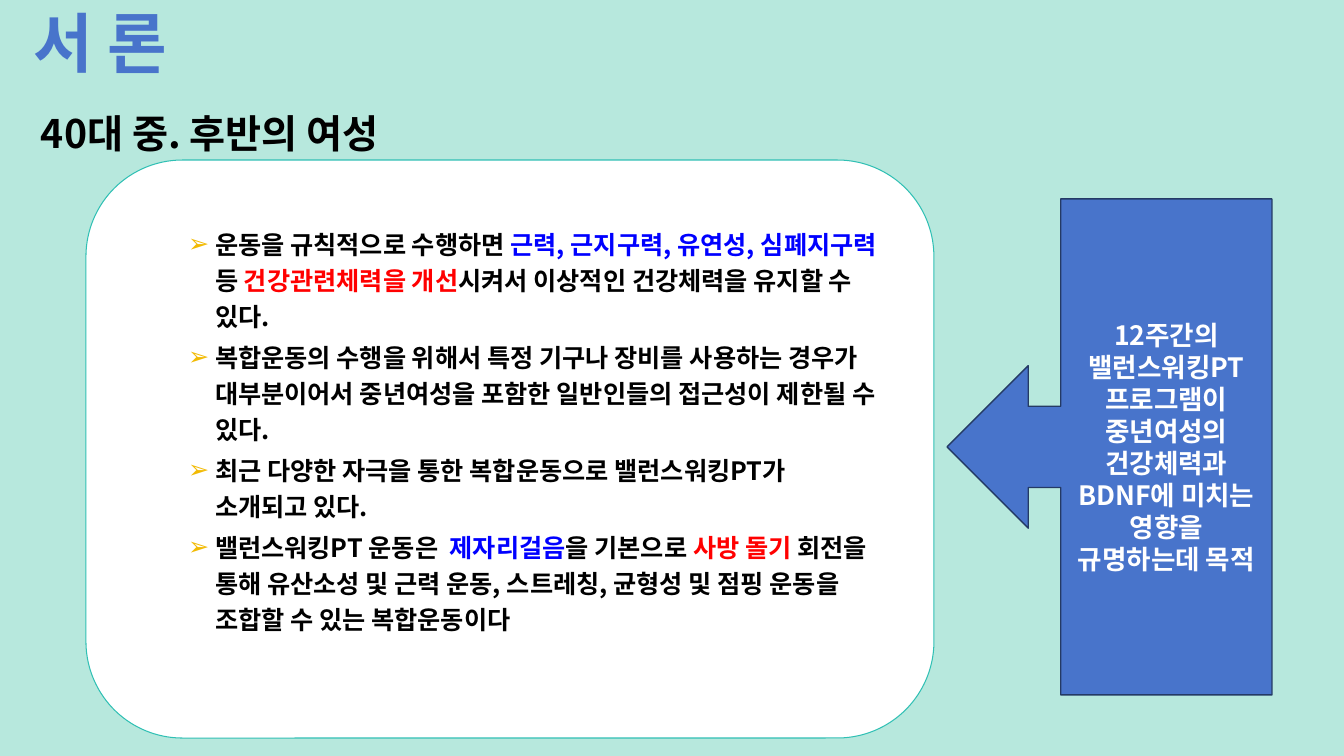
import dataclasses
import pptx
import pptx.util
import pptx.dml.color
import pptx.enum.shapes
import pptx.enum.text
import pptx.oxml
import pptx.oxml.ns
import lxml.etree

TITLE = "서 론"
SUBTITLE = "40대 중. 후반의 여성"
POINTS = [
    [("운동을 규칙적으로 수행하면 ", "ink"),
     ("근력, 근지구력, 유연성, 심폐지구력", "blue"),
     (" 등 ", "ink"),
     ("건강관련체력을 개선", "red"),
     ("시켜서 이상적인 건강체력을 유지할 수 있다.", "ink")],
    [("복합운동의 수행을 위해서 특정 기구나 장비를 사용하는 경우가 대부분이어서 "
      "중년여성을 포함한 일반인들의 접근성이 제한될 수 있다.", "ink")],
    [("최근 다양한 자극을 통한 복합운동으로 밸런스워킹PT가 소개되고 있다.", "ink")],
    [("밸런스워킹PT 운동은  ", "ink"),
     ("제자리걸음", "blue"),
     ("을 기본으로 ", "ink"),
     ("사방 돌기 ", "red"),
     ("회전을 통해 유산소성 및 근력 운동, 스트레칭, 균형성 및 점핑 운동을 "
      "조합할 수 있는 복합운동이다", "ink")],
]
PURPOSE = ("12주간의 밸런스워킹PT 프로그램이 중년여성의 건강체력과 "
           "BDNF에 미치는 영향을 규명하는데 목적")

PAGE = (1344, 756)
TITLE_AREA = (33, 11, 1157, 72)
SUBTITLE_AREA = (41, 109, 1212, 108)
CARD_AREA = (86, 160, 848, 578)
LIST_AREA = (140, 223, 738, 414)
CALLOUT_AREA = (947, 199, 325, 496)
LIST_INDENT = 75
BULLET_HANG = 27
EMU_PER_PX = 914400 / 100.8


@dataclasses.dataclass(frozen=True)
class Theme:
    font: str = "Noto Sans CJK KR"
    page: str = "B7E8DD"
    accent: str = "4874CB"
    accent_edge: str = "243A65"
    card: str = "FFFFFF"
    card_edge: str = "30C0B4"
    bullet: str = "F2BA02"
    ink: str = "000000"
    blue: str = "0000FF"
    red: str = "FF0000"
    title_size: float = 46.2
    subtitle_size: int = 28
    list_size: int = 18
    callout_size: int = 19


THEME = Theme()
ALIGN = pptx.enum.text.PP_ALIGN
ANCHOR = pptx.enum.text.MSO_ANCHOR
SHAPE = pptx.enum.shapes.MSO_SHAPE


def px(length):
    return pptx.util.Emu(round(length * EMU_PER_PX))


def rgb(value):
    return pptx.dml.color.RGBColor.from_string(value)


def place(shape, area):
    shape.left, shape.top, shape.width, shape.height = map(px, area)


def prepare_frame(box, anchor, inset=0):
    frame = box.text_frame
    frame.word_wrap = True
    frame.auto_size = pptx.enum.text.MSO_AUTO_SIZE.NONE
    frame.vertical_anchor = anchor
    frame.margin_left = frame.margin_right = px(inset)
    frame.margin_top = frame.margin_bottom = px(inset // 2)
    return frame


def style(para, size, color, align=ALIGN.LEFT, spacing=1.0, kerned=True):
    para.alignment = align
    para.line_spacing = spacing
    para.space_before = pptx.util.Pt(0)
    font = para.font
    font.name = THEME.font
    font.size = pptx.util.Pt(size)
    font.bold = True
    font.color.rgb = rgb(color)
    defaults = para._p.pPr.find(pptx.oxml.ns.qn("a:defRPr"))
    if not kerned:
        defaults.set("kern", "0")
    east_asian = lxml.etree.SubElement(defaults, pptx.oxml.ns.qn("a:ea"))
    east_asian.set("typeface", THEME.font)


def add_bullet(para):
    properties = para._p.get_or_add_pPr()
    properties.set("marL", str(px(LIST_INDENT)))
    properties.set("indent", str(-px(BULLET_HANG)))
    color = lxml.etree.SubElement(properties, pptx.oxml.ns.qn("a:buClr"))
    lxml.etree.SubElement(color, pptx.oxml.ns.qn("a:srgbClr")).set("val", THEME.bullet)
    lxml.etree.SubElement(properties, pptx.oxml.ns.qn("a:buFont")).set("typeface", "Arial")
    lxml.etree.SubElement(properties, pptx.oxml.ns.qn("a:buChar")).set("char", "➢")


def add_panel(page, kind, area, fill, edge, edge_width, adjustments):
    panel = page.shapes.add_shape(kind, *map(px, area))
    panel.shadow.inherit = False
    panel.fill.solid()
    panel.fill.fore_color.rgb = rgb(fill)
    panel.line.color.rgb = rgb(edge)
    panel.line.width = pptx.util.Pt(edge_width)
    for index, value in enumerate(adjustments):
        panel.adjustments[index] = value
    return panel


def fill_list(frame):
    for index, point in enumerate(POINTS):
        para = frame.add_paragraph() if index else frame.paragraphs[0]
        add_bullet(para)
        style(para, THEME.list_size, THEME.ink, spacing=1.2, kerned=False)
        para.space_after = pptx.util.Pt(3)
        for text, color in point:
            span = para.add_run()
            span.text = text
            if color != "ink":
                span.font.color.rgb = rgb(getattr(THEME, color))


def main():
    deck = pptx.Presentation()
    deck.slide_width, deck.slide_height = map(px, PAGE)
    page = deck.slides.add_slide(deck.slide_layouts[1])
    page.background.fill.solid()
    page.background.fill.fore_color.rgb = rgb(THEME.page)

    title, body = page.placeholders
    place(title, TITLE_AREA)
    frame = prepare_frame(title, ANCHOR.MIDDLE)
    frame.text = TITLE
    style(frame.paragraphs[0], THEME.title_size, THEME.accent, spacing=0.9)

    subtitle = page.shapes.add_textbox(*map(px, SUBTITLE_AREA))
    frame = prepare_frame(subtitle, ANCHOR.TOP)
    frame.text = SUBTITLE
    style(frame.paragraphs[0], THEME.subtitle_size, THEME.ink, kerned=False)

    card = add_panel(page, SHAPE.ROUNDED_RECTANGLE, CARD_AREA,
                     THEME.card, THEME.card_edge, 0, [0.167])
    body._element.addprevious(card._element)
    place(body, LIST_AREA)
    fill_list(prepare_frame(body, ANCHOR.TOP))

    callout = add_panel(page, SHAPE.LEFT_ARROW_CALLOUT, CALLOUT_AREA,
                        THEME.accent, THEME.accent_edge, 1, [0.25, 0.25, 0.25, 0.65])
    frame = prepare_frame(callout, ANCHOR.MIDDLE, inset=10)
    frame.text = PURPOSE
    style(frame.paragraphs[0], THEME.callout_size, THEME.card, ALIGN.CENTER)

    deck.save("out.pptx")


if __name__ == "__main__":
    main()
